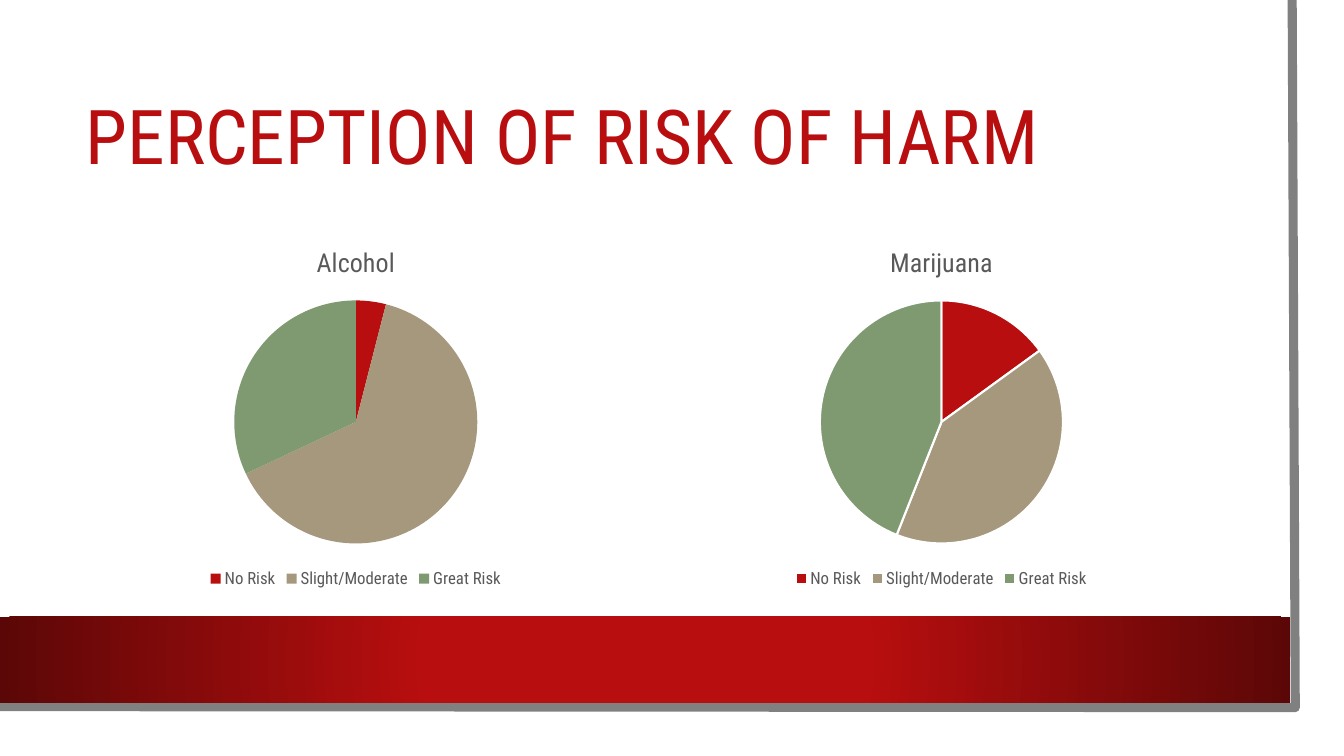
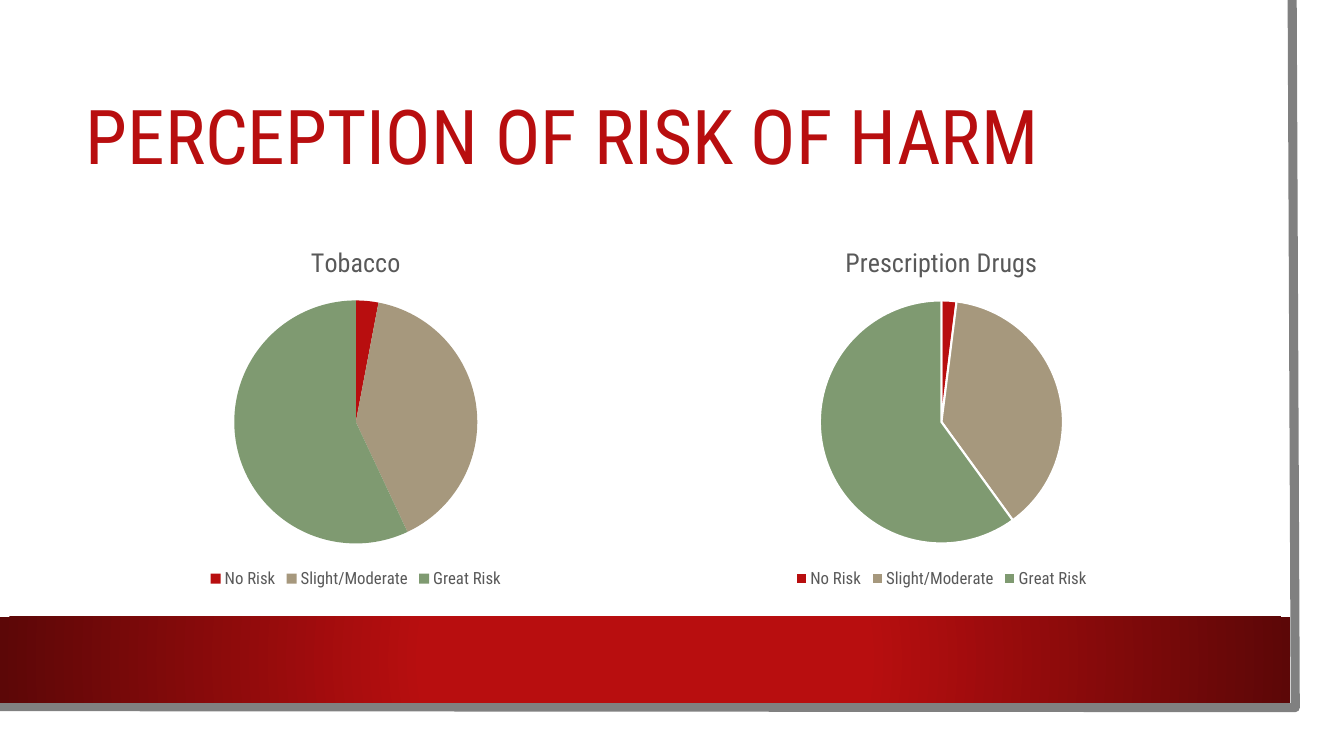
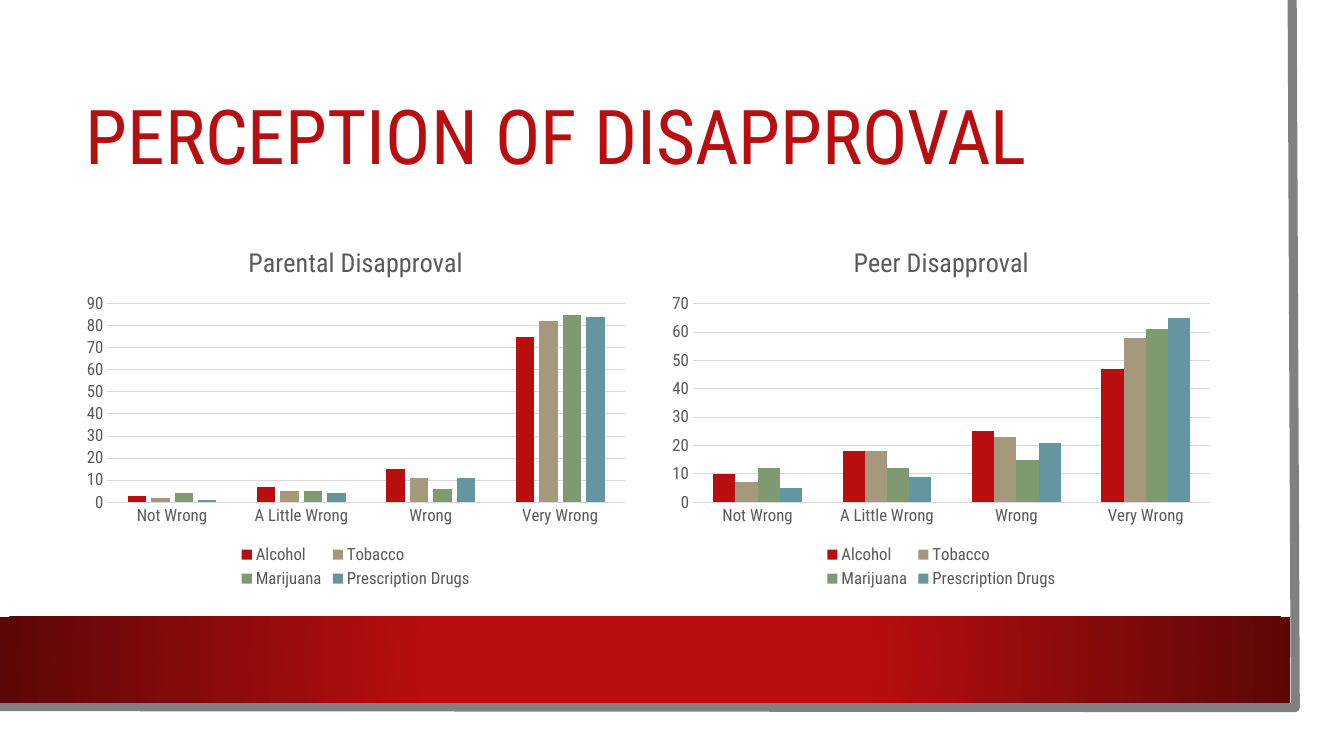
from dataclasses import dataclass

from pptx import Presentation
from pptx.chart.data import CategoryChartData as ChartData
from pptx.dml.color import RGBColor as Color
from pptx.enum.chart import XL_CHART_TYPE as ChartType
from pptx.enum.chart import XL_LEGEND_POSITION as LegendPosition
from pptx.enum.chart import XL_TICK_MARK as TickMark
from pptx.enum.shapes import MSO_SHAPE as Preset
from pptx.enum.text import MSO_ANCHOR as Anchor
from pptx.enum.text import PP_ALIGN as Align
from pptx.oxml import parse_xml
from pptx.oxml.ns import nsdecls, qn
from pptx.util import Pt


def rgb(code):
    return Color.from_string(code)


@dataclass(frozen=True)
class Theme:
    font: str = "Roboto Condensed"
    red: Color = rgb("B80E0F")
    dark_red: Color = rgb("5C0707")
    sand: Color = rgb("A6987D")
    green: Color = rgb("7F9A71")
    teal: Color = rgb("64969F")
    white: Color = rgb("FFFFFF")
    edge: Color = rgb("808080")
    grid: Color = rgb("D9D9D9")
    label: Color = rgb("595959")
    title_size: float = 54
    chart_title_size: float = 18.6
    label_size: float = 12

    @property
    def palette(self):
        return self.red, self.sand, self.green, self.teal


THEME = Theme()
MARGIN = 54
CHART_TOP, CHART_WIDTH, CHART_HEIGHT, CHART_GAP = 162.72, 400.32, 260.64, 18
TITLE_WIDTH = 2 * CHART_WIDTH + CHART_GAP

RISKS = ("No Risk", "Slight/Moderate", "Great Risk")
RISK_PAGES = (
    (("Alcohol", (4, 64, 32)), ("Marijuana", (15, 41, 44))),
    (("Tobacco", (3, 40, 57)), ("Prescription Drugs", (2, 38, 60))),
)
OPINIONS = ("Not Wrong", "A Little Wrong", "Wrong", "Very Wrong")
PARENTS = {
    "Alcohol": (3, 7, 15, 75),
    "Tobacco": (2, 5, 11, 82),
    "Marijuana": (4, 5, 6, 85),
    "Prescription Drugs": (1, 4, 11, 84),
}
PEERS = {
    "Alcohol": (10, 18, 25, 47),
    "Tobacco": (7, 18, 23, 58),
    "Marijuana": (12, 12, 15, 61),
    "Prescription Drugs": (5, 9, 21, 65),
}


def style_font(font, size, color):
    font.name = THEME.font
    font.size = Pt(size)
    font.color.rgb = color
    font.bold = False


def draw_edge(page):
    """Grey line along the right and bottom of the sheet."""
    builder = page.shapes.build_freeform(Pt(923), Pt(0))
    corners = ((925.2, 505.44), (-2.16, 504.72))
    builder.add_line_segments([(Pt(x), Pt(y)) for x, y in corners], close=False)
    edge = builder.convert_to_shape()
    edge.shadow.inherit = False
    edge.fill.background()
    edge.line.color.rgb = THEME.edge
    edge.line.width = Pt(6.5)
    return edge


def draw_band(page):
    band = page.shapes.add_shape(
        Preset.RECTANGLE, Pt(0), Pt(440.64), Pt(921.6), Pt(61.2))
    band.shadow.inherit = False
    band.line.fill.background()
    band.fill.gradient()
    stops = ((0.34, THEME.red), (1, THEME.dark_red))
    for stop, (position, color) in zip(band.fill.gradient_stops, stops):
        stop.position = position
        stop.color.rgb = color
    linear = band.element.spPr.find(qn("a:gradFill")).find(qn("a:lin"))
    radial = parse_xml(
        f'<a:path {nsdecls("a")} path="circle">'
        '<a:fillToRect l="50000" t="50000" r="50000" b="50000"/></a:path>')
    linear.getparent().replace(linear, radial)
    return band


def set_up_layout(layout, page):
    """Place the title and move the decoration from the page to its layout."""
    title = layout.placeholders[0]
    title.left, title.top = Pt(MARGIN), Pt(MARGIN)
    title.width, title.height = Pt(TITLE_WIDTH), Pt(91.44)
    for order, shape in enumerate((draw_edge(page), draw_band(page))):
        shape.element.nvSpPr.cNvPr.set("id", str(100 + order))
        layout.shapes.element.insert(2 + order, shape.element)


def add_title(page, text):
    frame = page.shapes.title.text_frame
    frame.vertical_anchor = Anchor.MIDDLE
    frame.word_wrap = True
    para = frame.paragraphs[0]
    para.alignment = Align.LEFT
    para.line_spacing = 0.9
    span = para.add_run()
    span.text = text
    style_font(span.font, THEME.title_size, THEME.red)


def add_chart(page, kind, column, title, categories, series):
    """Add a titled chart with a bottom legend in column 0 or 1."""
    data = ChartData()
    data.categories = categories
    for name, values in series.items():
        data.add_series(name, values)
    left = MARGIN + column * (CHART_WIDTH + CHART_GAP)
    chart = page.shapes.add_chart(
        kind, Pt(left), Pt(CHART_TOP), Pt(CHART_WIDTH), Pt(CHART_HEIGHT), data).chart
    style_font(chart.font, THEME.label_size, THEME.label)
    chart.has_title = True
    span = chart.chart_title.text_frame.paragraphs[0].add_run()
    span.text = title
    style_font(span.font, THEME.chart_title_size, THEME.label)
    chart.has_legend = True
    chart.legend.position = LegendPosition.BOTTOM
    chart.legend.include_in_layout = False
    style_font(chart.legend.font, THEME.label_size, THEME.label)
    return chart


def add_pie(page, column, name, values, outlined):
    chart = add_chart(page, ChartType.PIE, column, name, RISKS, {name: values})
    plot = chart.plots[0]
    plot.vary_by_categories = True
    for index, color in enumerate(THEME.palette[:len(values)]):
        slice_format = plot.series[0].points[index].format
        slice_format.fill.solid()
        slice_format.fill.fore_color.rgb = color
        if outlined:
            slice_format.line.color.rgb = THEME.white
            slice_format.line.width = Pt(1.5)
        else:
            slice_format.line.fill.background()


def add_columns(page, column, title, series, gap, overlap):
    chart = add_chart(
        page, ChartType.COLUMN_CLUSTERED, column, title, OPINIONS, series)
    plot = chart.plots[0]
    plot.vary_by_categories = False
    plot.gap_width, plot.overlap = gap, overlap
    for bars, color in zip(plot.series, THEME.palette):
        bars.format.fill.solid()
        bars.format.fill.fore_color.rgb = color
    for axis in (chart.category_axis, chart.value_axis):
        axis.major_tick_mark = axis.minor_tick_mark = TickMark.NONE
        style_font(axis.tick_labels.font, THEME.label_size, THEME.label)
    chart.value_axis.format.line.fill.background()
    chart.value_axis.has_major_gridlines = True
    for line in (chart.category_axis.format.line,
                 chart.value_axis.major_gridlines.format.line):
        line.color.rgb = THEME.grid
        line.width = Pt(0.75)


def main():
    deck = Presentation()
    deck.slide_width, deck.slide_height = Pt(960), Pt(540)
    layout = deck.slide_layouts.get_by_name("Title Only")
    pages = [deck.slides.add_slide(layout) for _ in range(3)]
    set_up_layout(layout, pages[0])

    for page, pies in zip(pages, RISK_PAGES):
        add_title(page, "PERCEPTION OF RISK OF HARM")
        for column, (name, values) in enumerate(pies):
            add_pie(page, column, name, values, outlined=column == 1)

    add_title(pages[2], "PERCEPTION OF DISAPPROVAL")
    add_columns(pages[2], 0, "Parental Disapproval", PARENTS, gap=219, overlap=-27)
    add_columns(pages[2], 1, "Peer Disapproval", PEERS, gap=182, overlap=0)
    deck.save("out.pptx")


if __name__ == "__main__":
    main()
